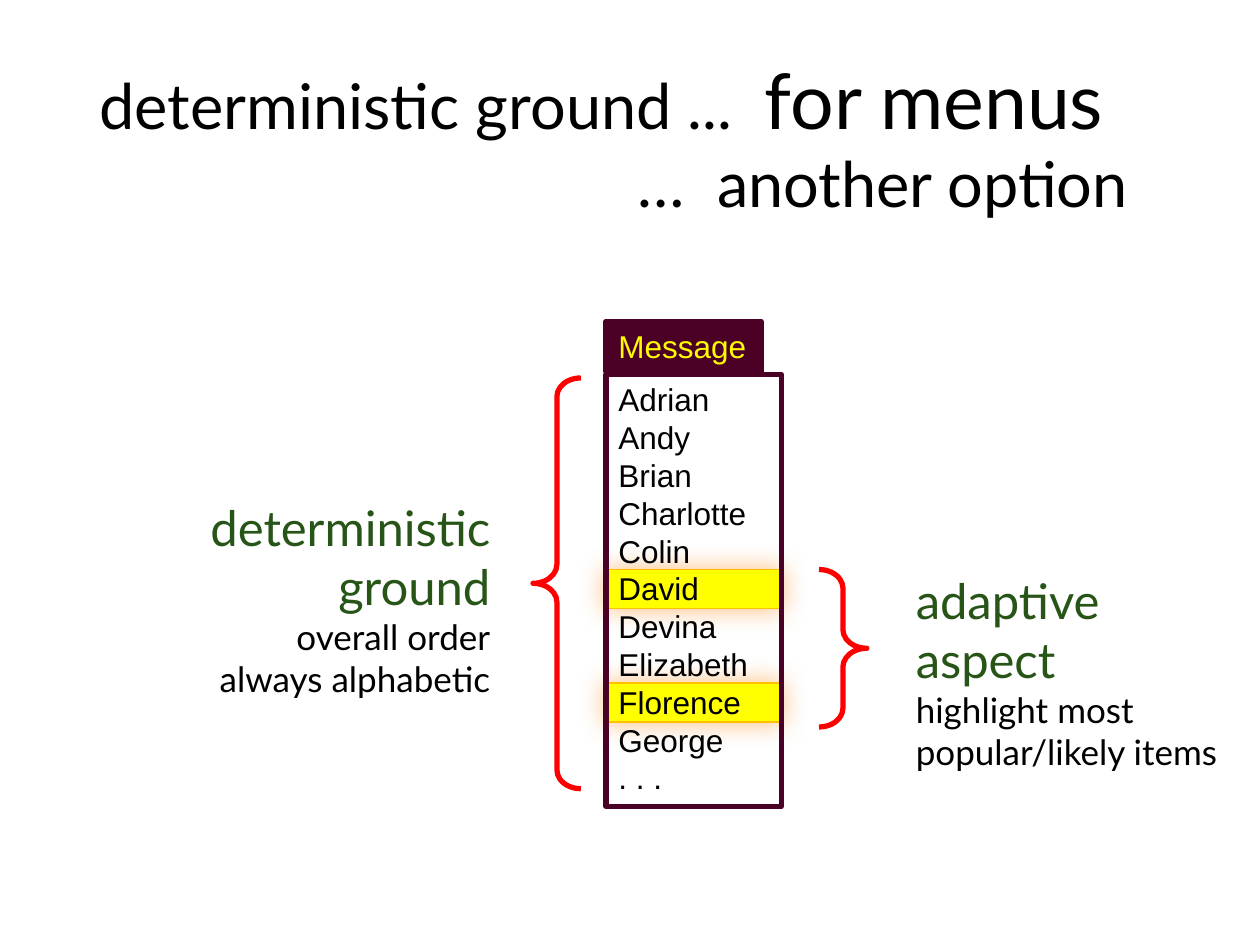
"""Builds the slide on deterministic ground for menus with highlighted items."""
from dataclasses import dataclass
from typing import NamedTuple, Optional

from lxml.etree import SubElement
from pptx import Presentation
from pptx.dml.color import RGBColor
from pptx.enum.shapes import MSO_SHAPE as Preset
from pptx.enum.text import MSO_ANCHOR as Anchor, MSO_AUTO_SIZE as AutoSize, PP_ALIGN as Align
from pptx.oxml.ns import qn
from pptx.util import Inches, Pt


@dataclass(frozen=True)
class Theme:
    ink: str = "000000"
    green: str = "275417"
    plum: str = "4B0025"
    menu_title: str = "FFFB00"
    highlight: str = "FFFF00"
    highlight_edge: str = "FFC000"
    glow: str = "FFBD7B"
    brace: str = "FF0000"
    display_font: str = "Lato"
    menu_font: str = "Arial"
    title_large: int = 44
    title: int = 36
    heading: int = 28
    detail: int = 20
    menu: int = 18
    menu_pitch: float = 21.6
    heavy: int = 3
    glow_blur: int = 15


class Box(NamedTuple):
    column: float
    row: float
    columns: float
    rows: float


class Run(NamedTuple):
    text: str
    size: int
    color: str
    font: str


class Label(NamedTuple):
    box: Box
    align: Align
    heading: str
    details: tuple
    left_margin: float


class Brace(NamedTuple):
    preset: Preset
    box: Box


THEME = Theme()
CELL = 0.1
MENU = Box(48.1, 29.7, 13.9, 34.3)
MENU_HEADER = Box(48.1, 25.5, 12.3, 4)
INSET_ROWS = 0.5
ITEM_ROWS = 3
HIGHLIGHT_ROWS = 3.1
ITEMS = ("Adrian", "Andy", "Brian", "Charlotte", "Colin", "David",
         "Devina", "Elizabeth", "Florence", "George", ". . .")
POPULAR = ("David", "Florence")
TITLE = Box(6.9, 4, 86.2, 14.5)
LABELS = (
    Label(Box(71.7, 44.8, 27.7, 12.5), Align.LEFT, "adaptive aspect",
          ("highlight most popular/likely items",), 0.1),
    Label(Box(2.8, 39, 37.1, 12.5), Align.RIGHT, "deterministic ground",
          ("overall order", "always alphabetic"), 0.4),
)
BRACES = (
    Brace(Preset.RIGHT_BRACE, Box(65, 45.2, 3.8, 12.5)),
    Brace(Preset.LEFT_BRACE, Box(42.3, 30, 3.8, 32.6)),
)


def place(box: Box) -> tuple:
    """Turns grid cells into slide lengths."""
    return tuple(Inches(cells * CELL) for cells in box)


def add_run(paragraph, run: Run) -> None:
    """Adds one formatted run to a paragraph."""
    piece = paragraph.add_run()
    piece.text = run.text
    piece.font.size = Pt(run.size)
    piece.font.name = run.font
    piece.font.color.rgb = RGBColor.from_string(run.color)


def fill_text(frame, lines: list, align: Align = Align.LEFT, spacing=None) -> None:
    """Writes each list of runs as one paragraph."""
    frame.word_wrap = True
    frame.auto_size = AutoSize.NONE
    for index, runs in enumerate(lines):
        paragraph = frame.paragraphs[0] if index == 0 else frame.add_paragraph()
        paragraph.alignment = align
        if spacing is not None:
            paragraph.line_spacing = spacing
        for run in runs:
            add_run(paragraph, run)


def add_shape(slide, preset: Preset, box: Box, line: str, width: float,
              fill: Optional[str] = None):
    """Adds an outlined preset shape without a shadow."""
    shape = slide.shapes.add_shape(preset, *place(box))
    shape.shadow.inherit = False
    shape.line.color.rgb = RGBColor.from_string(line)
    shape.line.width = Pt(width)
    if fill is None:
        shape.fill.background()
    else:
        shape.fill.solid()
        shape.fill.fore_color.rgb = RGBColor.from_string(fill)
    return shape


def add_highlight(slide, item: str) -> None:
    """Adds a glowing bar behind a menu item."""
    row = MENU.row + INSET_ROWS + ITEMS.index(item) * ITEM_ROWS
    box = Box(MENU.column, row, MENU.columns, HIGHLIGHT_ROWS)
    shape = add_shape(slide, Preset.RECTANGLE, box, THEME.highlight_edge, 1, THEME.highlight)
    effects = shape._element.spPr.find(qn("a:effectLst"))
    glow = SubElement(effects, qn("a:outerShdw"), blurRad=str(Pt(THEME.glow_blur)),
                      dist="0", dir="5400000", algn="ctr", rotWithShape="0")
    SubElement(glow, qn("a:srgbClr"), val=THEME.glow)


def add_menu_box(slide, box: Box, texts: tuple, color: str, fill: Optional[str] = None) -> None:
    """Adds a framed part of the menu with one line for each text."""
    shape = add_shape(slide, Preset.RECTANGLE, box, THEME.plum, THEME.heavy, fill)
    frame = shape.text_frame
    frame.vertical_anchor = Anchor.TOP
    frame.margin_right = 0
    lines = [[Run(text, THEME.menu, color, THEME.menu_font)] for text in texts]
    fill_text(frame, lines, spacing=Pt(THEME.menu_pitch))


def add_label(slide, label: Label) -> None:
    """Adds a green heading with its details."""
    frame = slide.shapes.add_textbox(*place(label.box)).text_frame
    frame.margin_left = Inches(label.left_margin)
    lines = [[Run(label.heading, THEME.heading, THEME.green, THEME.display_font)]]
    lines += [[Run(text, THEME.detail, THEME.ink, THEME.display_font)] for text in label.details]
    fill_text(frame, lines, label.align)


def set_title(slide) -> None:
    """Places and writes the two-line title."""
    title = slide.shapes.title
    title.left, title.top, title.width, title.height = place(TITLE)
    frame = title.text_frame
    frame.vertical_anchor = Anchor.MIDDLE
    frame.margin_right = Inches(0.36)
    fill_text(frame, [
        [Run("deterministic ground ...  ", THEME.title, THEME.ink, THEME.display_font),
         Run("for menus", THEME.title_large, THEME.ink, THEME.display_font)],
        [Run("…  another option", THEME.title, THEME.ink, THEME.display_font)],
    ], spacing=0.9)
    last = frame.paragraphs[-1]
    last.alignment = Align.RIGHT
    last.space_before = Pt(4)


def main() -> None:
    """Builds and saves the presentation."""
    presentation = Presentation()
    presentation.slide_width, presentation.slide_height = Inches(10), Inches(7.5)
    slide = presentation.slides.add_slide(presentation.slide_layouts[5])
    set_title(slide)
    for item in POPULAR:
        add_highlight(slide, item)
    add_menu_box(slide, MENU, ITEMS, THEME.ink)
    add_menu_box(slide, MENU_HEADER, ("Message",), THEME.menu_title, THEME.plum)
    for label in LABELS:
        add_label(slide, label)
    for brace in BRACES:
        shape = add_shape(slide, brace.preset, brace.box, THEME.brace, THEME.heavy)
        shape.adjustments[0] = 0.39
    presentation.save("out.pptx")


if __name__ == "__main__":
    main()
